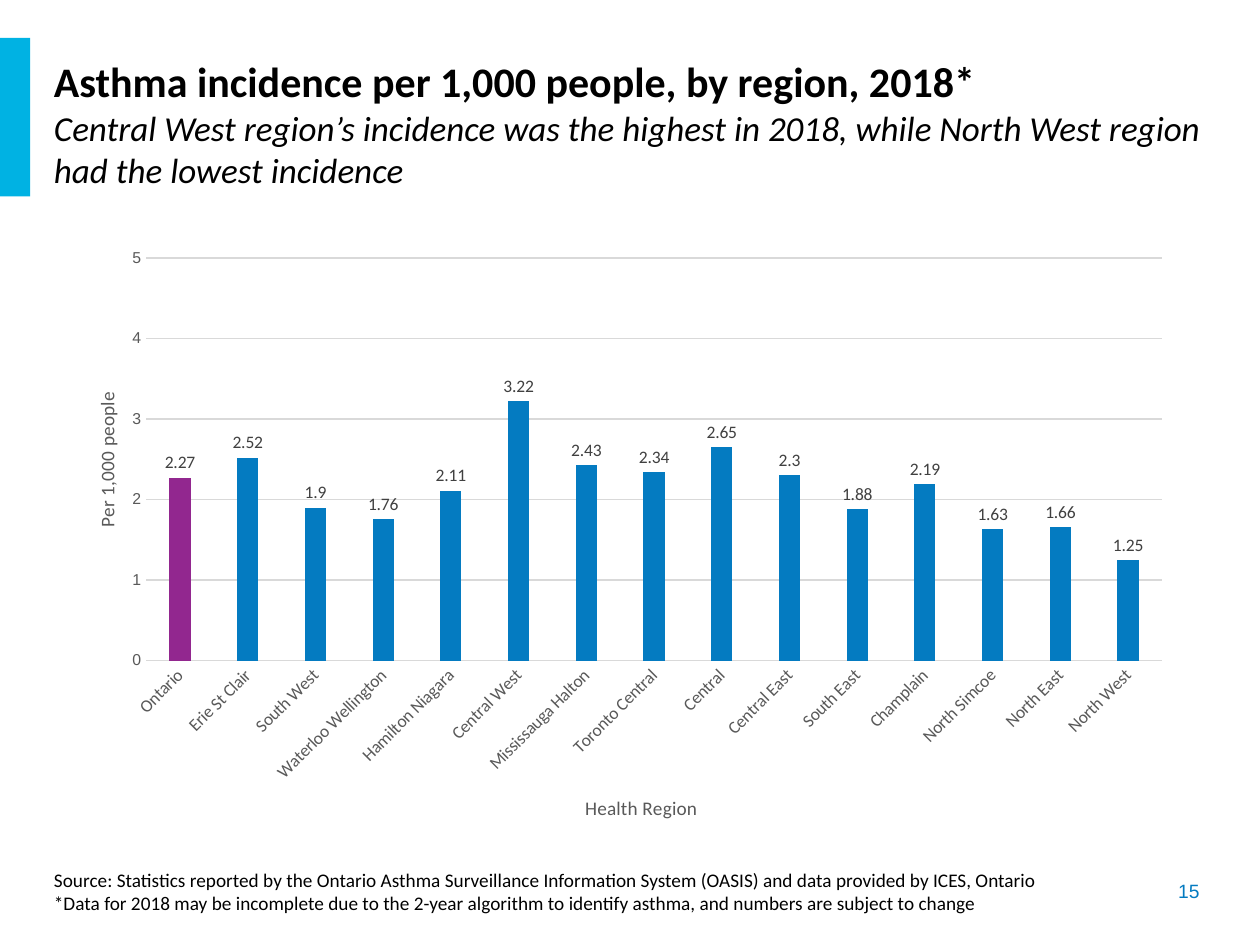
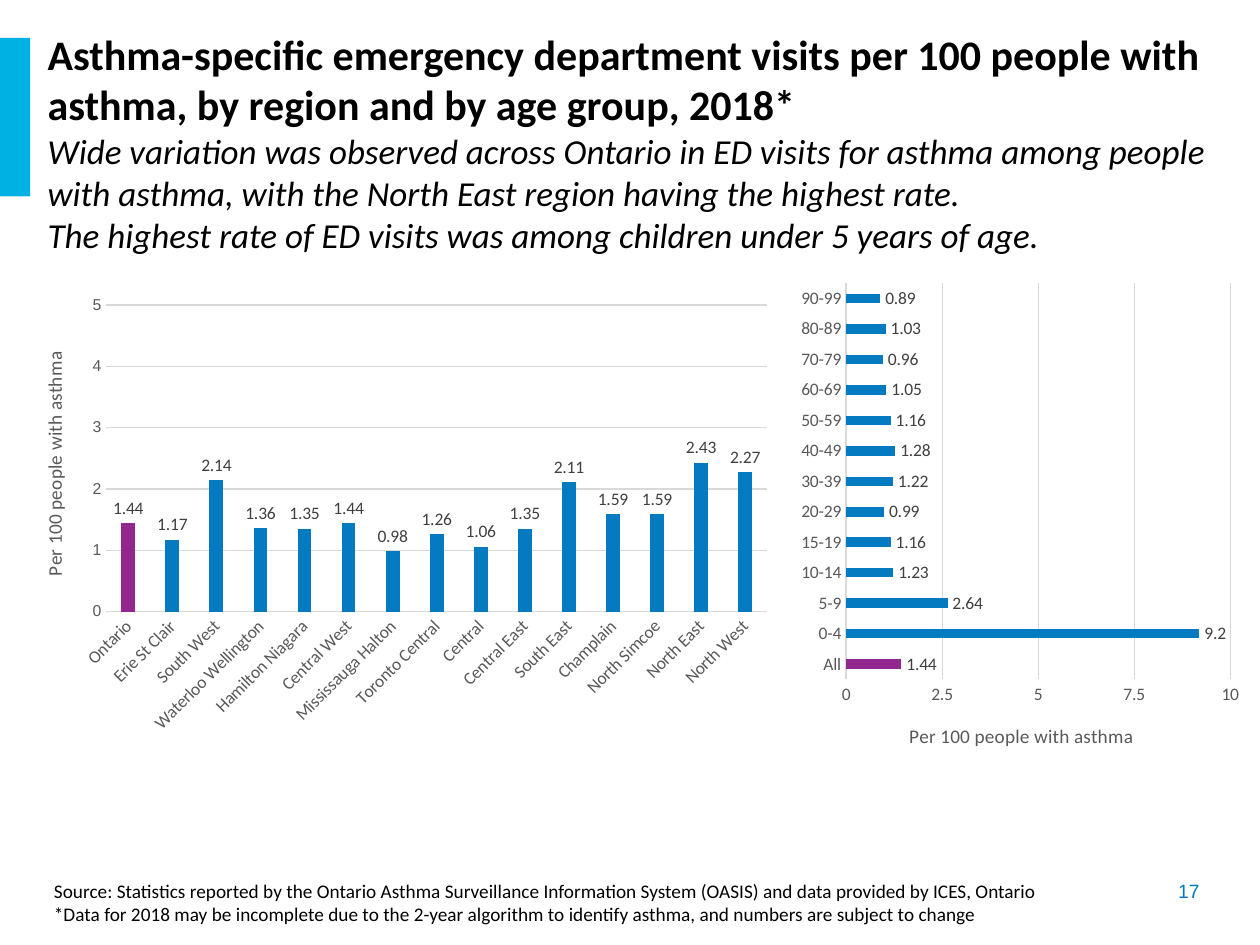
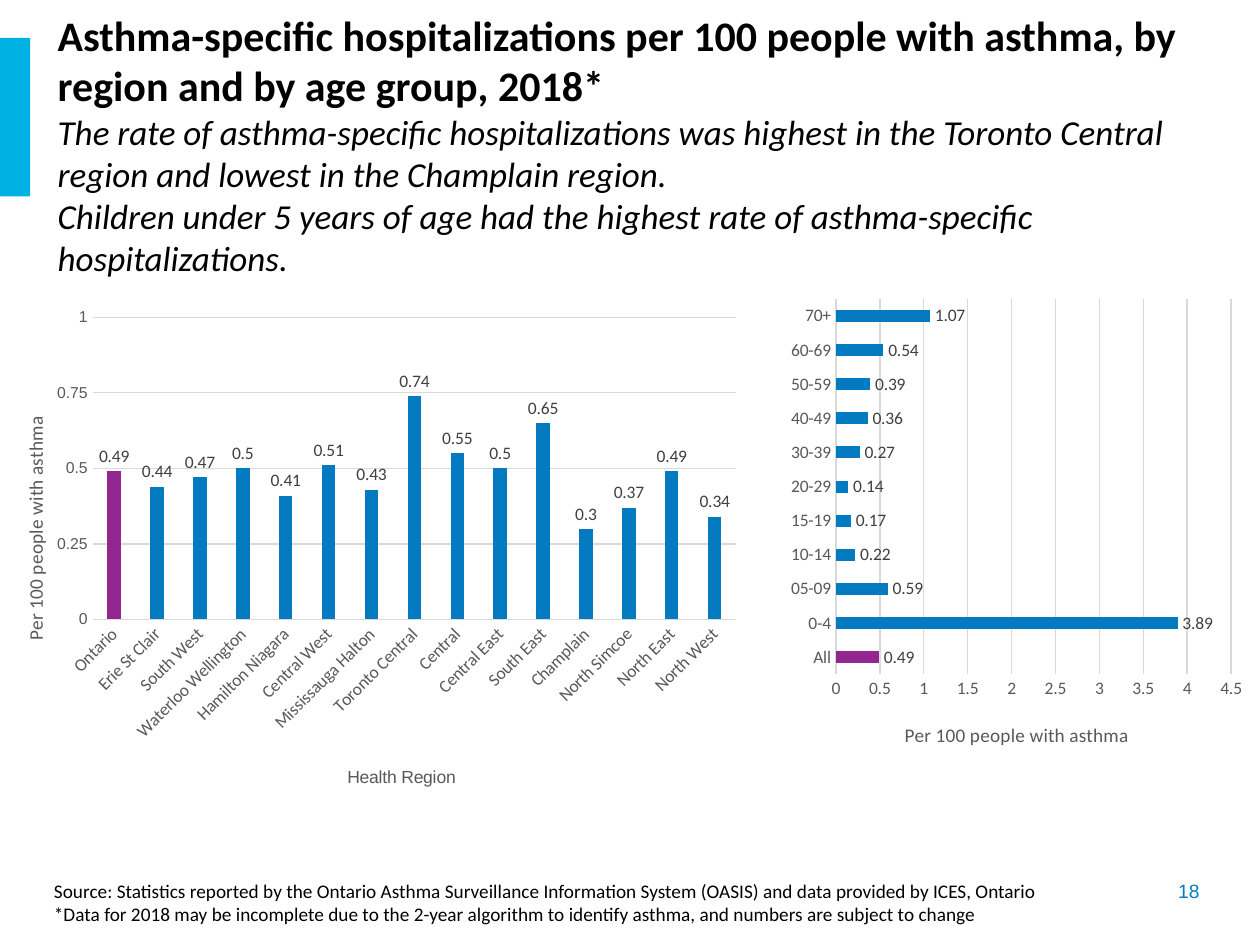
from pptx import Presentation
from pptx import util as u
from pptx.chart.data import CategoryChartData
from pptx.dml.color import RGBColor
from pptx.enum import chart as charts, shapes, text
from pptx.oxml import parse_xml
from pptx.oxml.ns import nsdecls, qn

CYAN, BLUE, PURPLE = "00B2E3", "047BC1", "92278F"
BLACK, AXIS_GREY, LABEL_GREY, GRID_GREY = "000000", "595959", "404040", "D9D9D9"

REGIONS = ["Ontario", "Erie St Clair", "South West", "Waterloo Wellington",
           "Hamilton Niagara", "Central West", "Mississauga Halton",
           "Toronto Central", "Central", "Central East", "South East",
           "Champlain", "North Simcoe", "North East", "North West"]
MIDDLE_AGES = ["10-14", "15-19", "20-29", "30-39", "40-49", "50-59", "60-69"]
FOOTNOTES = [
    "Source: Statistics reported by the Ontario Asthma Surveillance Information System (OASIS) "
    "and data provided by ICES, Ontario",
    "*Data for 2018 may be incomplete due to the 2-year algorithm to identify asthma, "
    "and numbers are subject to change"]
PER_100 = "Per 100 people with asthma"

# Chart titles are (words, font, size, place); places are fractions of the chart
SLIDES = [
    {"number": "15", "title_box": (0.33, 0.23, 9.45, 1.49), "footnote_top": 6.84,
     "title": ["Asthma incidence per 1,000 people, by region, 2018*",
               "Central West region’s incidence was the highest in 2018, while North West "
               "region had the lowest incidence"],
     "charts": [
         {"box": (0.54, 1.86, 8.86, 4.7), "plot": (0.07, 0.04, 0.91, 0.68),
          "categories": REGIONS, "maximum": 5, "step": 1, "gap": 219,
          "values": [2.27, 2.52, 1.9, 1.76, 2.11, 3.22, 2.43, 2.34, 2.65, 2.3, 1.88,
                     2.19, 1.63, 1.66, 1.25],
          "value_title": ("Per 1,000 people", "Calibri", 11, (0.02, 0.26)),
          "category_title": ("Health Region", "Calibri", 11, (0.46, 0.94))}]},
    {"number": "17", "title_box": (0.28, 0.25, 9.44, 1.75), "footnote_top": 6.93,
     "title": ["Asthma-specific emergency department visits per 100 people with asthma, "
               "by region and by age group, 2018*",
               "Wide variation was observed across Ontario in ED visits for asthma among people "
               "with asthma, with the North East region having the highest rate.",
               "The highest rate of ED visits was among children under 5 years of age."],
     "charts": [
         {"box": (6.28, 2.17, 3.63, 3.93), "plot": (0.12, 0.02, 0.84, 0.8),
          "categories": ["All", "0-4", "5-9", *MIDDLE_AGES, "70-79", "80-89", "90-99"],
          "maximum": 10, "step": 2.5, "gap": 219,
          "values": [1.44, 9.2, 2.64, 1.23, 1.16, 0.99, 1.22, 1.28, 1.16, 1.05, 0.96,
                     1.03, 0.89],
          "value_title": (PER_100, "Calibri", 11, (0.25, 0.9))},
         {"box": (0.18, 2.25, 6.03, 4.27), "plot": (0.11, 0.04, 0.87, 0.57),
          "categories": REGIONS, "maximum": 5, "step": 1, "gap": 219,
          "values": [1.44, 1.17, 2.14, 1.36, 1.35, 1.44, 0.98, 1.26, 1.06, 1.35, 2.11,
                     1.59, 1.59, 2.43, 2.27],
          "value_title": (PER_100, "Calibri", 11, (0.02, 0.12))}]},
    {"number": "18", "title_box": (0.36, 0.28, 9.14, 1.72), "footnote_top": 6.93,
     "title": ["Asthma-specific hospitalizations per 100 people with asthma, by region and by "
               "age group, 2018*",
               "The rate of asthma-specific hospitalizations was highest in the Toronto Central "
               "region and lowest in the Champlain region.",
               "Children under 5 years of age had the highest rate of asthma-specific "
               "hospitalizations."],
     "charts": [
         {"box": (0.09, 2.35, 5.87, 4.21), "plot": (0.11, 0.04, 0.87, 0.57),
          "categories": REGIONS, "maximum": 1, "step": 0.25, "gap": 219,
          "values": [0.49, 0.44, 0.47, 0.5, 0.41, 0.51, 0.43, 0.74, 0.55, 0.5, 0.65,
                     0.3, 0.37, 0.49, 0.34],
          "value_title": (PER_100, "Calibri", 11, (0.01, 0.22)),
          "category_title": ("Health Region", "Arial", 10, (0.45, 0.88))},
         {"box": (5.96, 2.14, 3.97, 3.87), "plot": (0.17, 0.06, 0.79, 0.77),
          "categories": ["All", "0-4", "05-09", *MIDDLE_AGES, "70+"],
          "maximum": 4.5, "step": 0.5, "gap": 182,
          "values": [0.49, 3.89, 0.59, 0.22, 0.17, 0.14, 0.27, 0.36, 0.39, 0.54, 1.07],
          "value_title": (PER_100, "Calibri", 11, (0.3, 0.92))}]},
]


def style_font(font, name, size, color, bold=False, italic=False):
    font.name, font.size = name, u.Pt(size)
    font.bold, font.italic = bold, italic
    font.color.rgb = RGBColor.from_string(color)


def place_in_chart(element, index, fractions):
    """Give a plot area (x, y, w, h) or a title (x, y) a fixed place."""
    for old_layout in element.findall(qn("c:layout")):
        element.remove(old_layout)
    modes = '<c:xMode val="edge"/><c:yMode val="edge"/>'
    if len(fractions) == 4:
        modes = '<c:layoutTarget val="inner"/>' + modes
    sizes = "".join(f'<c:{key} val="{value}"/>' for key, value in zip("xywh", fractions))
    element.insert(index, parse_xml(
        f'<c:layout {nsdecls("c")}><c:manualLayout>{modes}{sizes}</c:manualLayout></c:layout>'))


presentation = Presentation()
presentation.slide_width, presentation.slide_height = u.Inches(10), u.Inches(7.5)

for content in SLIDES:
    slide = presentation.slides.add_slide(presentation.slide_layouts[6])

    # Accent band at the left edge
    band = slide.shapes.add_shape(shapes.MSO_SHAPE.RECTANGLE, 0, u.Inches(0.3),
                                  u.Inches(0.24), u.Inches(1.26))
    band.shadow.inherit = False
    band.fill.solid()
    band.fill.fore_color.rgb = RGBColor.from_string(CYAN)
    band.line.fill.background()

    # Slide number, title with subtitle, and footnotes
    for part, box, lines in (
            ("number", (8.45, 6.93, 1.17, 0.29), [content["number"]]),
            ("title", content["title_box"], content["title"]),
            ("footnotes", (0.33, content["footnote_top"], 9.07, 0.66), FOOTNOTES)):
        text_box = slide.shapes.add_textbox(*map(u.Inches, box))
        frame = text_box.text_frame
        frame.word_wrap = True
        frame.text = "\n".join(lines)
        if part == "title":
            frame.vertical_anchor = text.MSO_ANCHOR.MIDDLE
        for position, paragraph in enumerate(frame.paragraphs):
            font = paragraph.runs[0].font
            if part == "number":
                paragraph.alignment = text.PP_ALIGN.RIGHT
                style_font(font, "Arial", 11, BLUE)
            elif part == "footnotes":
                style_font(font, "Calibri", 11, BLACK)
            elif position == 0:
                style_font(font, "Calibri", 24, BLACK, bold=True)
            else:
                style_font(font, "Calibri", 20, BLACK, italic=True)

    # Charts: columns by region, bars by age group
    for details in content["charts"]:
        by_region = details["categories"] is REGIONS
        data = CategoryChartData()
        data.categories = details["categories"]
        data.add_series("Series 1", details["values"])
        kind = charts.XL_CHART_TYPE.COLUMN_CLUSTERED if by_region else charts.XL_CHART_TYPE.BAR_CLUSTERED
        chart = slide.shapes.add_chart(kind, *map(u.Inches, details["box"]), data).chart
        chart.has_title = chart.has_legend = False
        style_font(chart.font, "Arial", 10, BLACK)
        place_in_chart(chart._chartSpace.chart.plotArea, 0, details["plot"])

        # Bars, with the overall rate highlighted
        plot = chart.plots[0]
        plot.vary_by_categories = False
        plot.gap_width = details["gap"]
        plot.overlap = -27 if by_region else 0
        series = plot.series[0]
        for target, color in ((series, BLUE), (series.points[0], PURPLE)):
            target.format.fill.solid()
            target.format.fill.fore_color.rgb = RGBColor.from_string(color)
        plot.has_data_labels = True
        plot.data_labels.show_value = True
        plot.data_labels.position = charts.XL_LABEL_POSITION.OUTSIDE_END
        style_font(plot.data_labels.font, "Calibri", 10, LABEL_GREY)

        # Axes and their titles
        category_axis, value_axis = chart.category_axis, chart.value_axis
        value_axis.minimum_scale, value_axis.maximum_scale = 0, details["maximum"]
        value_axis.major_unit = details["step"]
        value_axis.format.line.fill.background()
        for line in (category_axis.format.line, value_axis.major_gridlines.format.line):
            line.color.rgb = RGBColor.from_string(GRID_GREY)
            line.width = u.Pt(0.75)
        style_font(category_axis.tick_labels.font, "Calibri", 10, AXIS_GREY)
        if by_region:
            style_font(value_axis.tick_labels.font, "Arial", 9, AXIS_GREY)
            category_axis._element.find(qn("c:txPr")).find(qn("a:bodyPr")).set("rot", "-2700000")
        else:
            style_font(value_axis.tick_labels.font, "Calibri", 10, AXIS_GREY)
        for axis, key in ((category_axis, "category_title"), (value_axis, "value_title")):
            axis.major_tick_mark = axis.minor_tick_mark = charts.XL_TICK_MARK.NONE
            axis.has_title = key in details
            if axis.has_title:
                words, font_name, size, place = details[key]
                frame = axis.axis_title.text_frame
                frame.text = words
                style_font(frame.paragraphs[0].runs[0].font, font_name, size, AXIS_GREY)
                upright = by_region and axis is value_axis
                frame._txBody.find(qn("a:bodyPr")).set("rot", "-5400000" if upright else "0")
                place_in_chart(axis.axis_title._element, 1, place)

presentation.save("out.pptx")
